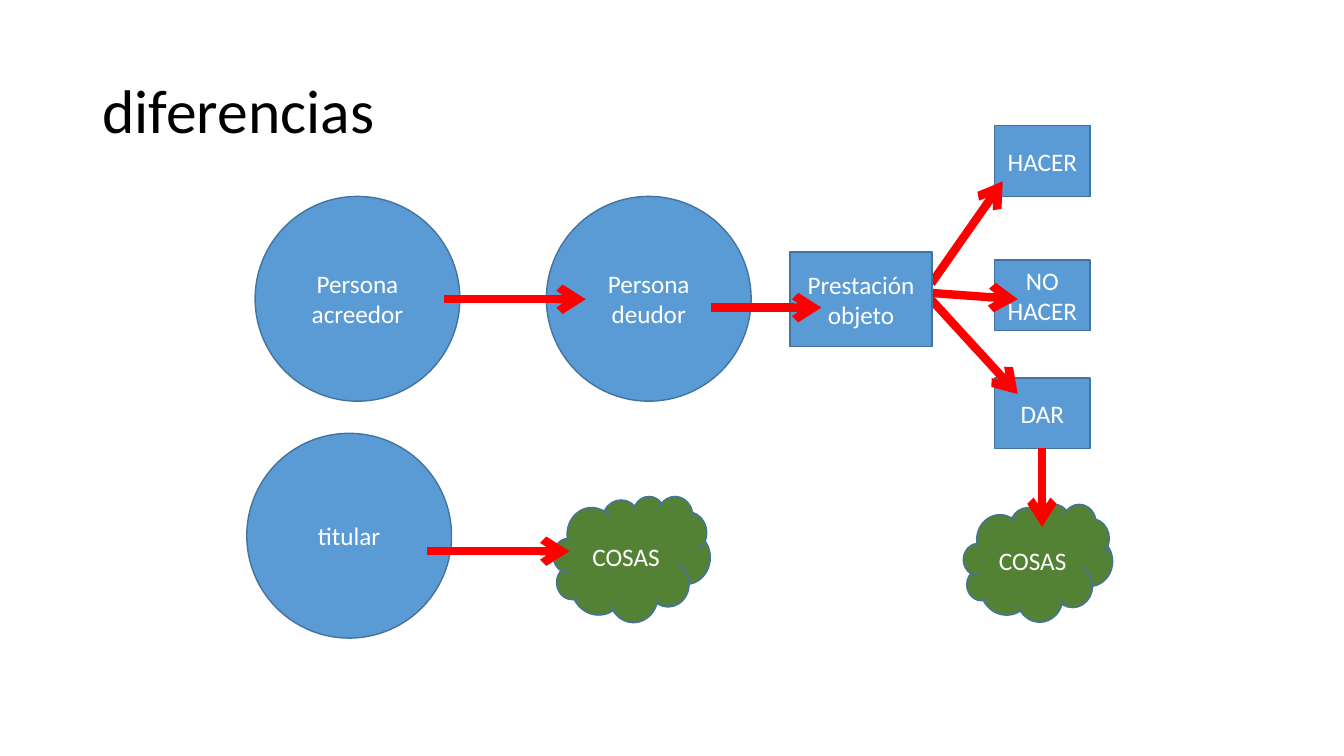
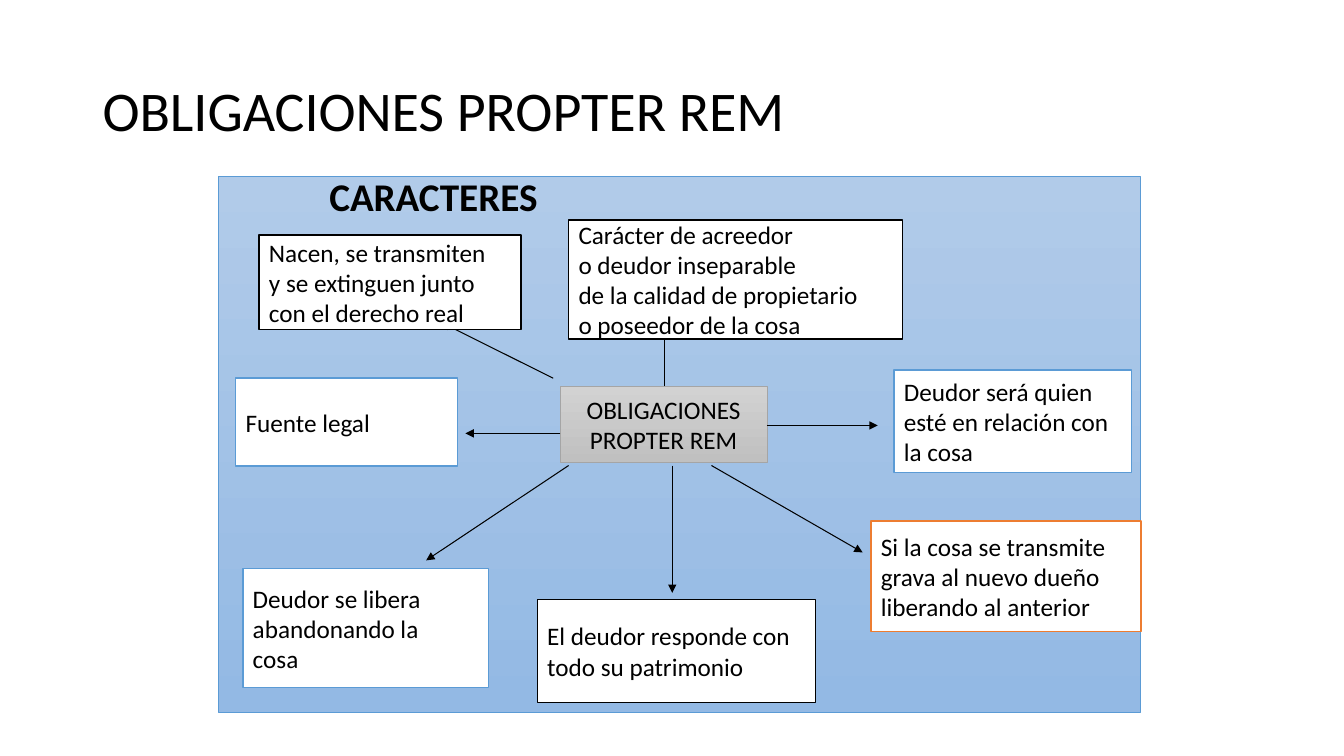
from dataclasses import dataclass
from typing import Optional, Sequence, Union

import pptx
import pptx.dml.color
import pptx.enum.shapes
import pptx.enum.text
import pptx.oxml
import pptx.oxml.ns
import pptx.util

Cm = pptx.util.Cm
Pt = pptx.util.Pt
RGBColor = pptx.dml.color.RGBColor
Shape = pptx.enum.shapes.MSO_SHAPE
Align = pptx.enum.text.PP_ALIGN
Anchor = pptx.enum.text.MSO_ANCHOR

FONT = "Calibri"
BLACK = RGBColor(0x00, 0x00, 0x00)
WHITE = RGBColor(0xFF, 0xFF, 0xFF)
RED = RGBColor(0xFF, 0x00, 0x00)
BLUE = RGBColor(0x5B, 0x9B, 0xD5)
DARK_BLUE = RGBColor(0x43, 0x73, 0x9E)
GREEN = RGBColor(0x54, 0x82, 0x35)
ORANGE = RGBColor(0xED, 0x7D, 0x31)
GRAY = RGBColor(0xA5, 0xA5, 0xA5)
PANEL_TOP = RGBColor(0xB1, 0xCB, 0xE9)
PANEL_BOTTOM = RGBColor(0x93, 0xB9, 0xE4)
CENTER_TOP = RGBColor(0xD2, 0xD2, 0xD2)
CENTER_BOTTOM = RGBColor(0xC0, 0xC0, 0xC0)

CIRCLE = 5.16
OPTION_LEFT, OPTION_WIDTH, OPTION_HEIGHT = 25.07, 2.4, 1.78


@dataclass(frozen=True)
class Style:
    fill: RGBColor
    line: RGBColor
    fill_end: Optional[RGBColor] = None
    line_width: float = 1
    color: RGBColor = BLACK
    align: Align = Align.LEFT


@dataclass(frozen=True)
class Node:
    text: str
    left: float
    top: float
    width: float
    height: float
    style: Style
    kind: Shape = Shape.RECTANGLE


@dataclass(frozen=True)
class Arrow:
    x1: float
    y1: float
    x2: float
    y2: float
    color: RGBColor = BLACK
    width: float = 0.75
    head: str = "triangle"


Item = Union[Node, Arrow]

PERSON = Style(BLUE, DARK_BLUE, color=WHITE, align=Align.CENTER)
THING = Style(GREEN, DARK_BLUE, color=WHITE, align=Align.CENTER)
CENTER = Style(CENTER_TOP, GRAY, CENTER_BOTTOM, 0.5, align=Align.CENTER)
PANEL = Style(PANEL_TOP, BLUE, PANEL_BOTTOM, 0.5)
BLACK_CARD = Style(WHITE, BLACK)
BLUE_CARD = Style(WHITE, BLUE)
ORANGE_CARD = Style(WHITE, ORANGE)


def circle(text: str, left: float, top: float) -> Node:
    return Node(text, left, top, CIRCLE, CIRCLE, PERSON, Shape.OVAL)


def option(text: str, top: float) -> Node:
    return Node(text, OPTION_LEFT, top, OPTION_WIDTH, OPTION_HEIGHT, PERSON)


def red_arrow(x1: float, y1: float, x2: float, y2: float) -> Arrow:
    return Arrow(x1, y1, x2, y2, RED, 6, "arrow")


DIFFERENCES: Sequence[Item] = (
    circle("Persona\nacreedor", 6.43, 4.95),
    circle("Persona\ndeudor", 13.77, 4.95),
    circle("titular", 6.22, 10.92),
    option("HACER", 3.17),
    option("NO HACER", 6.55),
    option("DAR", 9.53),
    Node("COSAS", 24.28, 12.7, 3.76, 2.97, THING, Shape.CLOUD),
    red_arrow(11.18, 7.54, 14.76, 7.54),
    red_arrow(23.09, 7.14, 25.65, 9.93),
    red_arrow(22.89, 7.34, 25.65, 7.54),
    red_arrow(23.47, 7.14, 25.27, 4.57),
    Node("Prestación objeto", 19.91, 6.35, 3.58, 2.39, PERSON),
    red_arrow(17.93, 7.75, 20.7, 7.75),
    Node("COSAS", 13.94, 12.5, 3.96, 3.18, THING, Shape.CLOUD),
    red_arrow(10.77, 13.89, 14.35, 13.89),
    red_arrow(26.26, 11.3, 26.26, 13.28),
)

CHARACTERS: Sequence[Item] = (
    Node("OBLIGACIONES\nPROPTER REM", 14.12, 9.73, 5.21, 1.93, CENTER),
    Arrow(13.94, 9.53, 11.13, 8.13),
    Arrow(14.12, 10.92, 11.73, 10.92),
    Arrow(16.74, 9.73, 16.74, 8.13),
    Arrow(19.33, 10.72, 22.12, 10.72),
    Arrow(17.93, 11.73, 21.74, 13.92),
    Arrow(16.94, 11.73, 16.94, 14.94),
    Arrow(14.33, 11.73, 10.74, 14.12),
    Node("Nacen, se transmiten\ny se extinguen junto\ncon el derecho real",
         6.53, 5.92, 6.6, 2.39, BLACK_CARD),
    Node("Fuente legal", 5.94, 9.53, 5.59, 2.21, BLUE_CARD),
    Node("Carácter de acreedor\no deudor inseparable\n"
         "de la calidad de propietario\no poseedor de la cosa",
         14.33, 5.54, 8.41, 3, BLACK_CARD),
    Node("Deudor será quien\nesté en relación con\nla cosa",
         22.53, 9.32, 5.99, 2.59, BLUE_CARD),
    Node("Si la cosa se transmite\ngrava al nuevo dueño\nliberando al anterior",
         21.95, 13.13, 6.81, 2.79, ORANGE_CARD),
    Node("El deudor responde con\ntodo su patrimonio",
         13.54, 15.11, 7.01, 2.59, BLACK_CARD),
    Node("Deudor se libera\nabandonando la\ncosa",
         6.12, 14.33, 6.2, 3, BLUE_CARD),
)


def write_text(frame, text: str, *, size: float = 18, color: RGBColor = BLACK,
               bold: bool = False, align: Align = Align.LEFT,
               anchor: Anchor = Anchor.MIDDLE, line_spacing: float = 1,
               space_before: float = 0) -> None:
    frame.word_wrap = True
    frame.auto_size = pptx.enum.text.MSO_AUTO_SIZE.NONE
    frame.vertical_anchor = anchor
    frame.text = text
    for para in frame.paragraphs:
        para.alignment = align
        para.line_spacing = line_spacing
        para.space_before = Pt(space_before)
        for span in para.runs:
            span.font.name = FONT
            span.font.size = Pt(size)
            span.font.bold = bold
            span.font.color.rgb = color


def add_box(page, node: Node):
    style = node.style
    box = page.shapes.add_shape(node.kind, Cm(node.left), Cm(node.top),
                                Cm(node.width), Cm(node.height))
    box.shadow.inherit = False
    if style.fill_end is None:
        box.fill.solid()
        box.fill.fore_color.rgb = style.fill
    else:
        box.fill.gradient()
        box.fill.gradient_angle = 270
        for stop, color in zip(box.fill.gradient_stops, (style.fill, style.fill_end)):
            stop.color.rgb = color
    box.line.color.rgb = style.line
    box.line.width = Pt(style.line_width)
    if node.text:
        write_text(box.text_frame, node.text, color=style.color, align=style.align)
    return box


def add_arrow(page, arrow: Arrow) -> None:
    connector = page.shapes.add_connector(
        pptx.enum.shapes.MSO_CONNECTOR.STRAIGHT,
        Cm(arrow.x1), Cm(arrow.y1), Cm(arrow.x2), Cm(arrow.y2))
    connector.line.color.rgb = arrow.color
    connector.line.width = Pt(arrow.width)
    namespace = pptx.oxml.ns.nsdecls("a")
    connector.line._get_or_add_ln().append(
        pptx.oxml.parse_xml(f'<a:tailEnd {namespace} type="{arrow.head}"/>'))
    connector._element.spPr.append(pptx.oxml.parse_xml(f"<a:effectLst {namespace}/>"))


def add_items(page, items: Sequence[Item]) -> None:
    for item in items:
        if isinstance(item, Node):
            add_box(page, item)
        else:
            add_arrow(page, item)


def add_page(deck, title: str, size: float):
    page = deck.slides.add_slide(deck.slide_layouts[5])
    heading = page.shapes.title
    heading.left, heading.top = Cm(2.33), Cm(1.01)
    heading.width, heading.height = Cm(29.21), Cm(3.68)
    write_text(heading.text_frame, title, size=size, line_spacing=0.9)
    return page


def main() -> None:
    deck = pptx.Presentation()
    deck.slide_width, deck.slide_height = Cm(33.87), Cm(19.05)

    add_items(add_page(deck, "diferencias", 44), DIFFERENCES)

    page = add_page(deck, "OBLIGACIONES PROPTER REM", 40)
    panel = add_box(page, Node("", 5.51, 4.45, 23.24, 13.49, PANEL))
    panel.text_frame.margin_left = Cm(2.79)
    write_text(panel.text_frame, "CARACTERES", size=28, bold=True,
               anchor=Anchor.TOP, line_spacing=0.8, space_before=5)
    add_items(page, CHARACTERS)

    deck.save("out.pptx")


if __name__ == "__main__":
    main()
